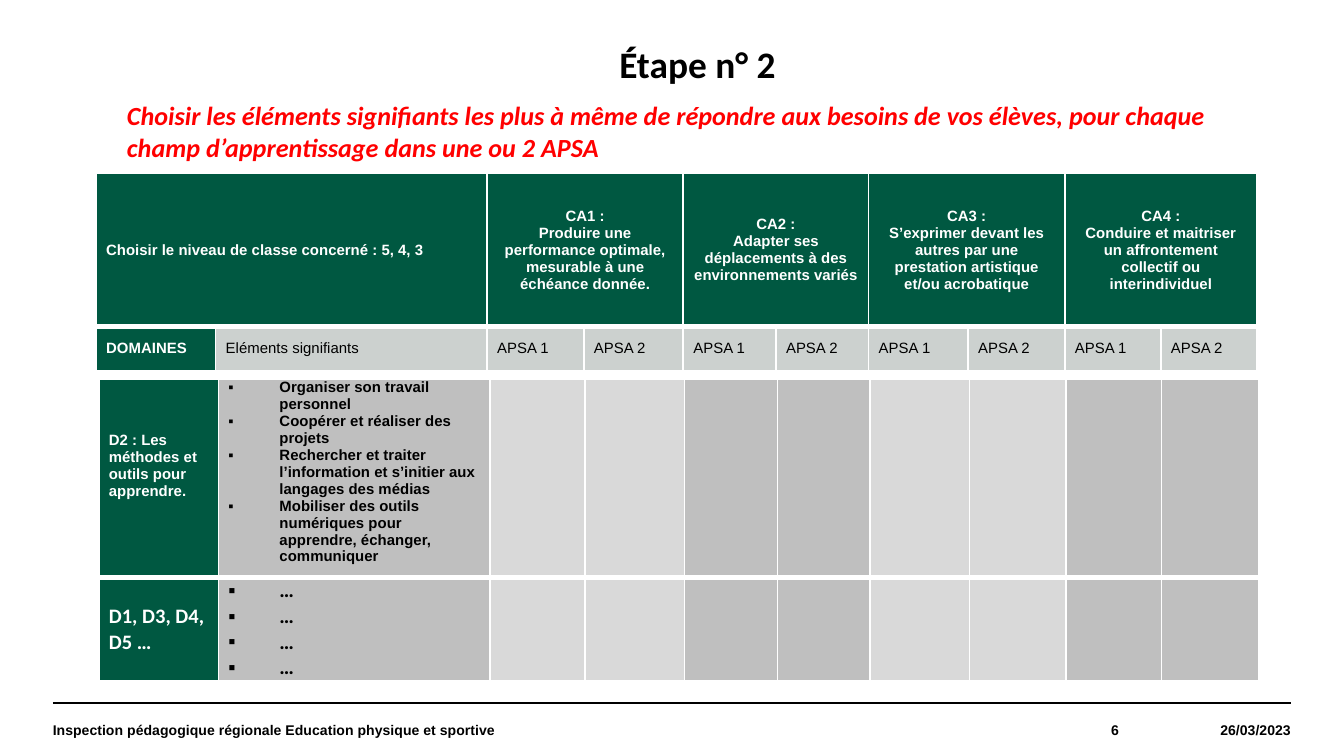
from dataclasses import dataclass
from typing import NamedTuple

from lxml import etree
from pptx import Presentation
from pptx import util as u
from pptx.dml.color import RGBColor
from pptx.enum import shapes, text
from pptx.oxml import ns

WIDE = 10
HIGH = WIDE * 9 / 16
LEFT, MID, RIGHT = text.PP_ALIGN.LEFT, text.PP_ALIGN.CENTER, text.PP_ALIGN.RIGHT


@dataclass(frozen=True)
class Theme:
    green: str = "005841"
    gray: str = "CCD1CF"
    dark: str = "BFBFBF"
    light: str = "D9D9D9"
    white: str = "FFFFFF"
    black: str = "000000"
    red: str = "FF0000"
    sans: str = "Arial"
    head: str = "Calibri"
    foot: float = 7.5
    cell: float = 8
    row: float = 11
    lead: float = 14
    title: float = 20


T = Theme()


class Box(NamedTuple):
    x: float
    y: float
    w: float
    h: float


class Style(NamedTuple):
    size: float
    color: str
    font: str = T.sans
    bold: bool = True
    slant: bool = False
    align: text.PP_ALIGN = LEFT


class Cell(NamedTuple):
    lines: list[str]
    fill: str
    style: Style
    span: int = 1
    list: bool = False
    pad: float = 0


class Grid(NamedTuple):
    x: float
    y: float
    cols: list[float]
    rows: list[float]
    cells: list[list[Cell]]


def across(share: float) -> int:
    return u.Inches(WIDE * share / 100)


def down(share: float) -> int:
    return u.Inches(HIGH * share / 100)


def frame(box: Box) -> tuple[int, int, int, int]:
    return across(box.x), down(box.y), across(box.w), down(box.h)


def add(parent, tag: str, **attrs: str):
    return etree.SubElement(parent, ns.qn(tag), attrs)


def write(body, lines: list[str], style: Style, dots: bool = False) -> None:
    body.text = "\n".join(lines)
    for i, par in enumerate(body.paragraphs):
        par.alignment = style.align
        par.space_before = u.Pt(0.2 if i else 0)
        if dots:
            props = par._p.get_or_add_pPr()
            props.set("marL", str(u.Inches(0.38)))
            props.set("indent", str(-u.Inches(0.38)))
            add(props, "a:buFont", typeface=T.sans)
            add(props, "a:buChar", char="▪")
        for run in par.runs:
            font = run.font
            font.name, font.size = style.font, u.Pt(style.size)
            font.bold, font.italic = style.bold, style.slant
            font.color.rgb = RGBColor.from_string(style.color)


def put(holder, box: Box, line: str, style: Style) -> None:
    holder.left, holder.top, holder.width, holder.height = frame(box)
    body = holder.text_frame
    write(body, [line], style)
    body.word_wrap = True
    body.auto_size = text.MSO_AUTO_SIZE.NONE
    body.vertical_anchor = text.MSO_ANCHOR.TOP
    props = body.paragraphs[0]._p.get_or_add_pPr()
    props.set("marL", "0")
    props.set("indent", "0")
    add(props, "a:buNone")


def label(slide, box: Box, line: str, style: Style) -> None:
    body = slide.shapes.add_textbox(*frame(box)).text_frame
    body.margin_left = body.margin_right = body.margin_top = body.margin_bottom = 0
    body.vertical_anchor = text.MSO_ANCHOR.MIDDLE
    body.word_wrap = True
    write(body, [line], style)


def rule(slide, x: float, y: float, end: float) -> None:
    line = slide.shapes.add_connector(
        shapes.MSO_CONNECTOR.STRAIGHT, across(x), down(y), across(end), down(y))
    line.line.color.rgb = RGBColor.from_string(T.black)
    line.line.width = u.Pt(0.8)
    add(line._element.spPr, "a:effectLst")


def edge(cell, row: int) -> None:
    props = cell._tc.get_or_add_tcPr()
    thick = "a:lnT" if row else "a:lnB"
    for tag in ("a:lnL", "a:lnR", "a:lnT", "a:lnB"):
        line = add(props, tag, w=str(u.Pt(3 if tag == thick else 1)))
        add(add(line, "a:solidFill"), "a:srgbClr", val=T.white)


def fill(cell, item: Cell, row: int) -> None:
    edge(cell, row)
    cell.fill.solid()
    cell.fill.fore_color.rgb = RGBColor.from_string(item.fill)
    cell.margin_left = cell.margin_right = u.Pt(5.4)
    cell.margin_top, cell.margin_bottom = 0, down(item.pad)
    cell.vertical_anchor = text.MSO_ANCHOR.TOP if item.list else text.MSO_ANCHOR.MIDDLE


def draw(slide, grid: Grid) -> None:
    box = Box(grid.x, grid.y, sum(grid.cols), sum(grid.rows))
    table = slide.shapes.add_table(len(grid.rows), len(grid.cols), *frame(box)).table
    table.first_row = table.horz_banding = False
    for col, wide in zip(table.columns, grid.cols):
        col.width = across(wide)
    for row, high in zip(table.rows, grid.rows):
        row.height = down(high)
    for r, items in enumerate(grid.cells):
        c = 0
        for item in items:
            for i in range(item.span):
                fill(table.cell(r, c + i), item, r)
            cell = table.cell(r, c)
            if item.span > 1:
                cell.merge(table.cell(r, c + item.span - 1))
            if item.lines:
                write(cell.text_frame, item.lines, item.style, item.list)
            c += item.span


def domain(name: str, points: list[str], size: float, font: str, pad: float = 0) -> list[Cell]:
    ink = Style(size, T.black, font)
    blank = [Cell([], T.light if c // 2 % 2 else T.dark, ink) for c in range(2, 10)]
    return [Cell([name], T.green, ink._replace(color=T.white), pad=pad),
            Cell(points, T.dark, ink, list=True), *blank]


def main() -> None:
    deck = Presentation()
    deck.slide_width, deck.slide_height = u.Inches(WIDE), u.Inches(HIGH)
    slide = deck.slides.add_slide(deck.slide_layouts[1])
    title, lead = slide.placeholders
    put(title, Box(8.5, 4.5, 86.8, 7.8), "Étape n° 2",
        Style(T.title, T.black, T.head, align=MID))
    put(lead, Box(8.45, 12.3, 86.8, 10.2),
        "Choisir les éléments signifiants les plus à même de répondre aux besoins "
        "de vos élèves, pour chaque champ d’apprentissage dans une ou 2 APSA",
        Style(T.lead, T.red, T.head, slant=True))

    rule(slide, 3.93, 93, 96.07)
    foot = Style(T.foot, T.black)
    for x, w, line, align in (
        (3.93, 64.6, "Inspection pédagogique régionale Education physique et sportive", LEFT),
        (68.5, 14.75, "6", RIGHT),
        (83.25, 12.8, "26/03/2023", RIGHT),
    ):
        label(slide, Box(x, 93.05, w, 6.95), line, foot._replace(align=align))

    white = Style(T.cell, T.white)
    plain = Style(T.cell, T.black, bold=False)
    fields = [
        "Produire une performance optimale, mesurable à une échéance donnée.",
        "Adapter ses déplacements à des environnements variés",
        "S’exprimer devant les autres par une prestation artistique et/ou acrobatique",
        "Conduire et maitriser un affrontement collectif ou interindividuel",
    ]
    top = [Cell(["Choisir le niveau de classe concerné : 5, 4, 3"], T.green, white, 2)]
    top += [Cell([f"CA{n} :", field], T.green, white._replace(align=MID), 2)
            for n, field in enumerate(fields, 1)]
    names = ["Eléments signifiants"] + ["APSA 1", "APSA 2"] * len(fields)
    sub = [Cell(["DOMAINES"], T.green, white)]
    sub += [Cell([name], T.gray, plain) for name in names]
    draw(slide, Grid(7.15, 22.93, [8.9, 20.2, 7.2, 7.4, 6.9, 6.9, 7.4, 7.2, 7.15, 7.15],
                     [20.27, 5.87], [top, sub]))

    tools = domain("D2 : Les méthodes et outils pour apprendre.", [
        "Organiser son travail personnel",
        "Coopérer et réaliser des projets",
        "Rechercher et traiter l’information et s’initier aux langages des médias",
        "Mobiliser des outils numériques pour apprendre, échanger, communiquer",
    ], T.cell, T.sans, 3.4)
    rest = domain("D1, D3, D4, D5 …", ["…"] * 4, T.row, T.head)
    draw(slide, Grid(7.35, 50.13, [8.9, 20.2, 7.1, 7.4, 6.9, 6.9, 7.4, 7.2, 7.1, 7.2],
                     [26.31, 13.69], [tools, rest]))
    deck.save("out.pptx")


if __name__ == "__main__":
    main()
